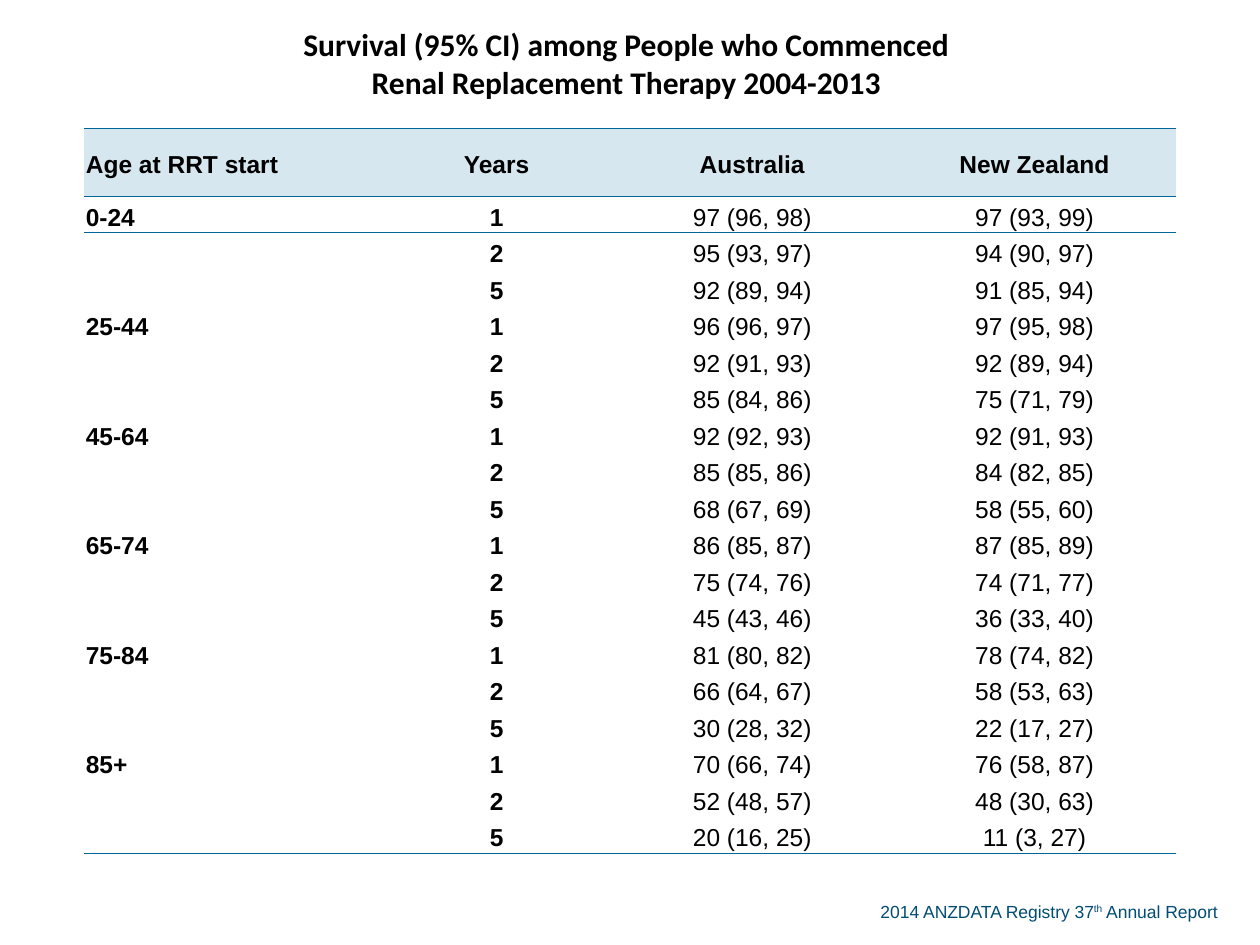
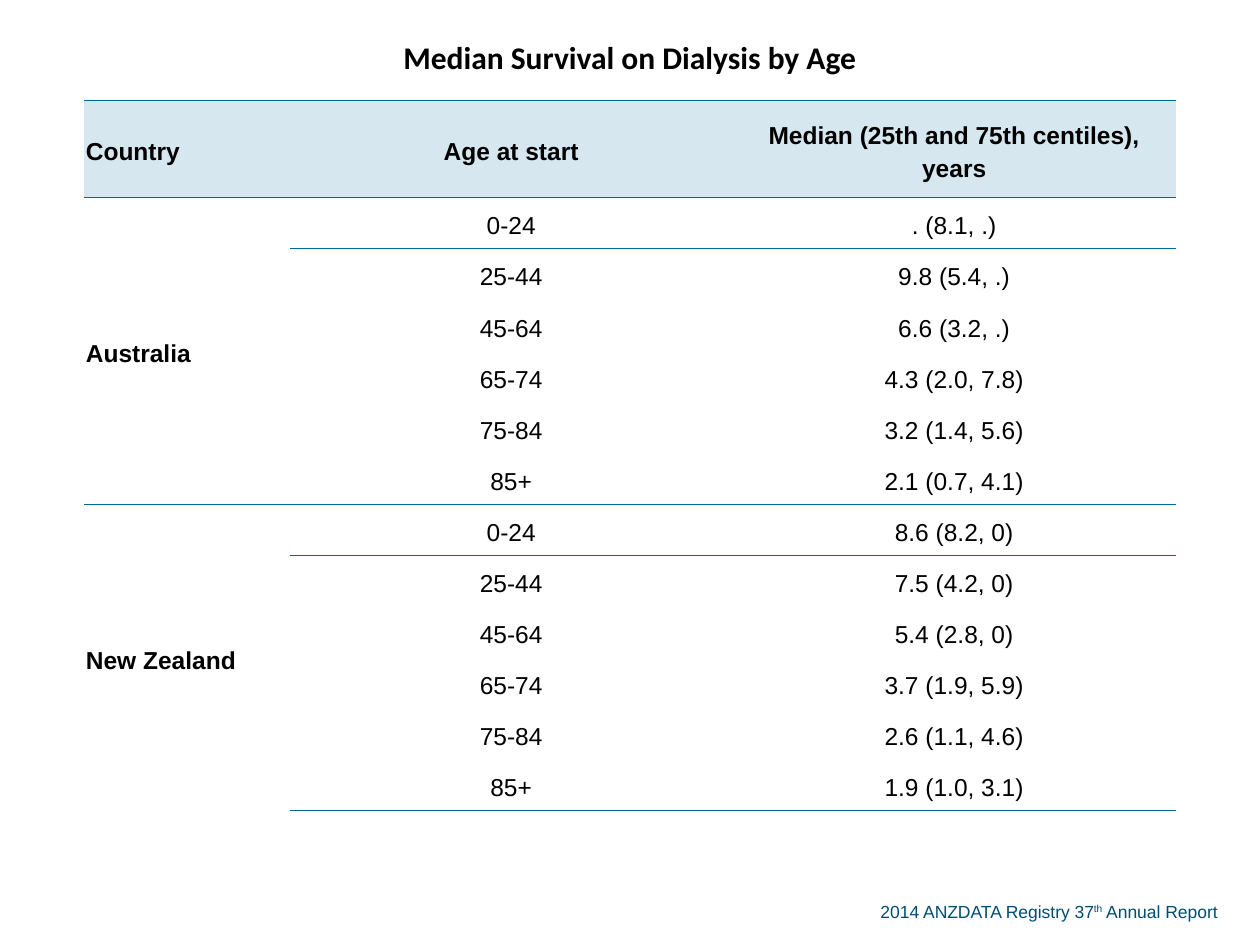
from dataclasses import dataclass
from typing import Any

from lxml.etree import SubElement
from pptx import Presentation
from pptx.dml.color import RGBColor
from pptx.enum.text import MSO_ANCHOR as Anchor, PP_ALIGN as Align
from pptx.oxml.ns import qn
from pptx.util import Cm, Pt

BLACK = RGBColor(0x00, 0x00, 0x00)
RULE_BLUE = RGBColor(0x00, 0x66, 0x99)
FOOTER_BLUE = RGBColor(0x00, 0x4D, 0x73)
HEADER_FILL = RGBColor(0xD7, 0xE7, 0xEF)

PLAIN_TABLE_STYLE = "{2D5ABB26-0587-4C30-8999-92F81FD0307C}"
BLANK_LAYOUT = 6
TITLE_ROW, HEADER_ROW, FIRST_BODY_ROW = 0, 1, 2
TABLE_LEFT = 1.7
BODY_SIZE = 14

TITLE_FONT = {"name": "Calibri", "size": Pt(18), "bold": True}
BODY_FONT = {"name": "Arial", "size": Pt(BODY_SIZE)}
FOOTER_FONT = {"name": "Arial", "size": Pt(10)}
CELL_FORMAT = {
    "vertical_anchor": Anchor.MIDDLE,
    "margin_left": Cm(0.03),
    "margin_top": Cm(0.03),
    "margin_right": Cm(0.03),
    "margin_bottom": 0,
}
BODY_PARAGRAPH = {"line_spacing": 1.19, "space_after": Pt(14)}
PLAIN_STYLE = {"first_row": False, "horz_banding": False}

AGES = ["0-24", "25-44", "45-64", "65-74", "75-84", "85+"]
YEARS = ["1", "2", "5"]

AUSTRALIA_SURVIVAL = [
    "97 (96, 98)", "95 (93, 97)", "92 (89, 94)",
    "96 (96, 97)", "92 (91, 93)", "85 (84, 86)",
    "92 (92, 93)", "85 (85, 86)", "68 (67, 69)",
    "86 (85, 87)", "75 (74, 76)", "45 (43, 46)",
    "81 (80, 82)", "66 (64, 67)", "30 (28, 32)",
    "70 (66, 74)", "52 (48, 57)", "20 (16, 25)",
]
NEW_ZEALAND_SURVIVAL = [
    "97 (93, 99)", "94 (90, 97)", "91 (85, 94)",
    "97 (95, 98)", "92 (89, 94)", "75 (71, 79)",
    "92 (91, 93)", "84 (82, 85)", "58 (55, 60)",
    "87 (85, 89)", "74 (71, 77)", "36 (33, 40)",
    "78 (74, 82)", "58 (53, 63)", "22 (17, 27)",
    "76 (58, 87)", "48 (30, 63)", "11 (3, 27)",
]
MEDIAN_SURVIVAL = {
    "Australia": [". (8.1, .)", "9.8 (5.4, .)", "6.6 (3.2, .)",
                  "4.3 (2.0, 7.8)", "3.2 (1.4, 5.6)", "2.1 (0.7, 4.1)"],
    "New Zealand": ["8.6 (8.2, 0)", "7.5 (4.2, 0)", "5.4 (2.8, 0)",
                    "3.7 (1.9, 5.9)", "2.6 (1.1, 4.6)", "1.9 (1.0, 3.1)"],
}


@dataclass(frozen=True)
class SurvivalTable:
    title: str
    header: list[str]
    body: list[list[str]]
    top: float
    column_widths: list[float]
    title_height: float
    header_height: float
    body_height: float
    bold_columns: int
    rows_per_rule: int
    merged_groups: bool

    @property
    def row_heights(self) -> list[float]:
        return [self.title_height, self.header_height] + [self.body_height] * len(self.body)

    @property
    def ruled_rows(self) -> set[int]:
        group_ends = range(HEADER_ROW, len(self.row_heights), self.rows_per_rule)
        return {TITLE_ROW, *group_ends}


def survival_rows() -> list[list[str]]:
    labels = [(age if year == YEARS[0] else "", year) for age in AGES for year in YEARS]
    return [[*label, australia, new_zealand] for label, australia, new_zealand
            in zip(labels, AUSTRALIA_SURVIVAL, NEW_ZEALAND_SURVIVAL)]


def median_rows() -> list[list[str]]:
    return [[country if age == AGES[0] else "", age, median]
            for country, medians in MEDIAN_SURVIVAL.items()
            for age, median in zip(AGES, medians)]


TABLES = [
    SurvivalTable(
        title="Survival (95% CI) among People who Commenced \v"
              "Renal Replacement Therapy 2004-2013 ",
        header=["Age at RRT start", "Years", "Australia", "New Zealand"],
        body=survival_rows(),
        top=0,
        column_widths=[6, 4.62, 5.69, 5.69],
        title_height=2.58,
        header_height=1.37,
        body_height=0.73,
        bold_columns=2,
        rows_per_rule=len(AGES) * len(YEARS),
        merged_groups=False,
    ),
    SurvivalTable(
        title="Median Survival on Dialysis by Age",
        header=["Country", "Age at start", "Median (25th and 75th centiles), years"],
        body=median_rows(),
        top=0.32,
        column_widths=[4.14, 8.93, 8.93],
        title_height=1.7,
        header_height=1.96,
        body_height=1.03,
        bold_columns=1,
        rows_per_rule=len(AGES),
        merged_groups=True,
    ),
]


def apply_format(target: Any, values: dict[str, Any]) -> None:
    for name, value in values.items():
        setattr(target, name, value)


def add_rule(cell: Any, side: str) -> None:
    properties = cell._tc.get_or_add_tcPr()
    line = SubElement(properties, qn(f"a:{side}"), w=str(Pt(0.5)))
    fill = SubElement(line, qn("a:solidFill"))
    SubElement(fill, qn("a:srgbClr"), val=str(RULE_BLUE))


def format_cell(cell: Any, text: str, row: int, column: int, content: SurvivalTable) -> None:
    apply_format(cell, CELL_FORMAT)
    if row - 1 in content.ruled_rows:
        add_rule(cell, "lnT")
    if row in content.ruled_rows:
        add_rule(cell, "lnB")
    if row == HEADER_ROW:
        cell.fill.solid()
        cell.fill.fore_color.rgb = HEADER_FILL
    else:
        cell.fill.background()

    cell.text = text
    paragraph = cell.text_frame.paragraphs[0]
    is_title = row == TITLE_ROW
    paragraph.alignment = Align.CENTER if is_title or column > 0 else Align.LEFT
    if not is_title:
        apply_format(paragraph, BODY_PARAGRAPH)
    if not text:
        SubElement(paragraph._p, qn("a:endParaRPr"), sz=str(BODY_SIZE * 100))
    bold = row == HEADER_ROW or column < content.bold_columns
    for run in paragraph.runs:
        apply_format(run.font, TITLE_FONT if is_title else {**BODY_FONT, "bold": bold})
        run.font.color.rgb = BLACK


def add_survival_table(slide: Any, content: SurvivalTable) -> None:
    column_count = len(content.header)
    title_cells = [content.title] + [""] * (column_count - 1)
    rows = [title_cells, content.header, *content.body]
    shape = slide.shapes.add_table(
        len(rows), column_count, Cm(TABLE_LEFT), Cm(content.top),
        Cm(sum(content.column_widths)), Cm(sum(content.row_heights)))
    table = shape.table
    apply_format(table, PLAIN_STYLE)
    table._tbl.tblPr.find(qn("a:tableStyleId")).text = PLAIN_TABLE_STYLE
    for column, width in zip(table.columns, content.column_widths):
        column.width = Cm(width)
    for row, height in zip(table.rows, content.row_heights):
        row.height = Cm(height)
    for row_index, texts in enumerate(rows):
        for column_index, text in enumerate(texts):
            format_cell(table.cell(row_index, column_index), text,
                        row_index, column_index, content)

    table.cell(TITLE_ROW, 0).merge(table.cell(TITLE_ROW, column_count - 1))
    if content.merged_groups:
        for first in range(FIRST_BODY_ROW, len(rows), content.rows_per_rule):
            table.cell(first, 0).merge(table.cell(first + content.rows_per_rule - 1, 0))


def add_footer(slide: Any) -> None:
    box = slide.shapes.add_textbox(Cm(17.5), Cm(18.03), Cm(7.6), Cm(0.69))
    box.text_frame.word_wrap = True
    paragraph = box.text_frame.paragraphs[0]
    for text in ("2014 ANZDATA Registry 37", "th", " Annual Report"):
        run = paragraph.add_run()
        run.text = text
        apply_format(run.font, FOOTER_FONT)
        run.font.color.rgb = FOOTER_BLUE
        if text == "th":
            run._r.get_or_add_rPr().set("baseline", "30000")


def main() -> None:
    presentation = Presentation()
    presentation.slide_width = Cm(25.4)
    presentation.slide_height = Cm(19.05)
    for content in TABLES:
        slide = presentation.slides.add_slide(presentation.slide_layouts[BLANK_LAYOUT])
        add_footer(slide)
        add_survival_table(slide, content)
    presentation.save("out.pptx")


if __name__ == "__main__":
    main()
